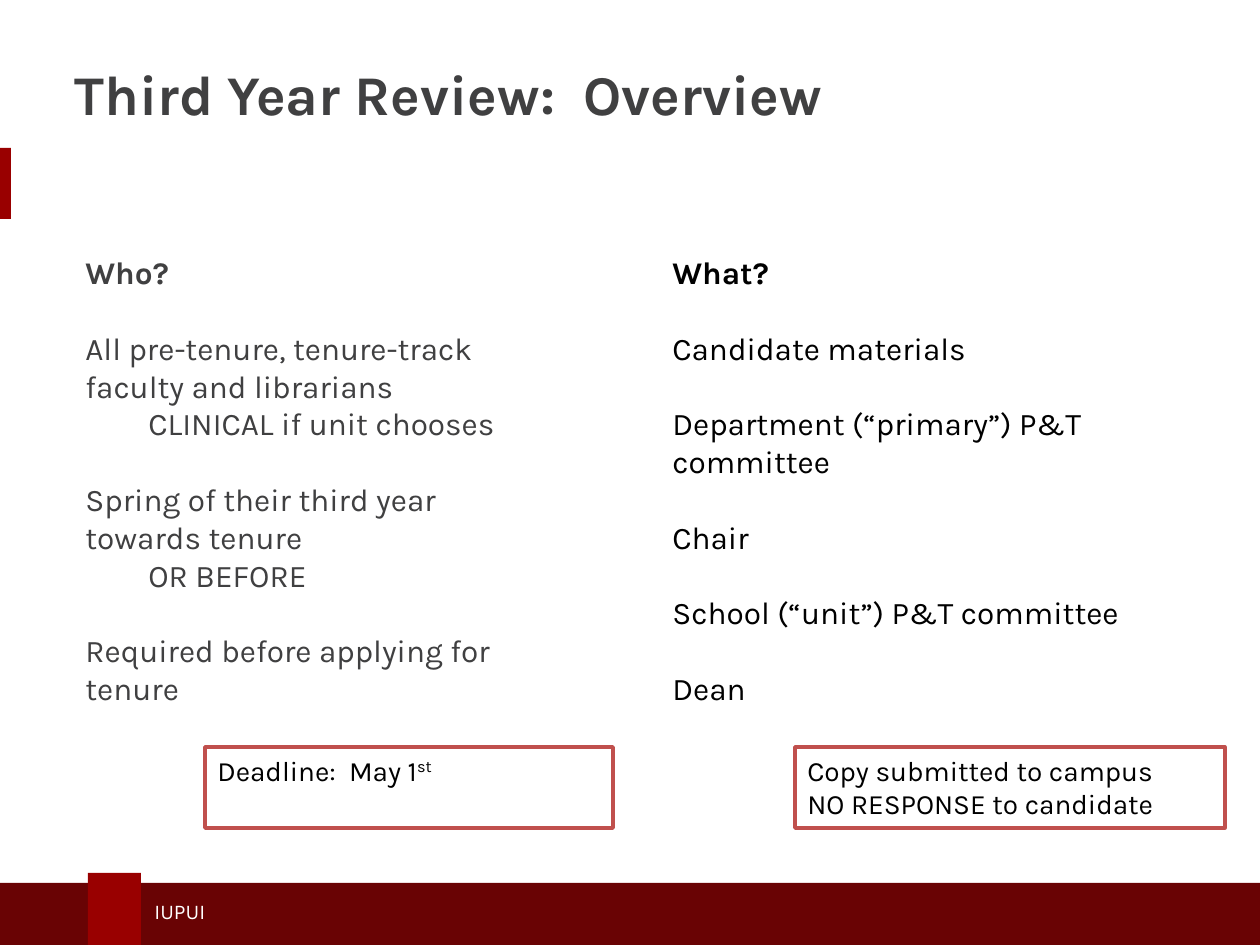
import pptx
import pptx.util
import pptx.dml.color
import pptx.enum.shapes
import pptx.enum.text

SCALE = 914400 / 126
CRIMSON, MAROON, GREY, BLACK, WHITE, RED = "990000", "690304", "404041", "000000", "FFFFFF", "C0504D"


def colour(hex_code):
    return pptx.dml.color.RGBColor.from_string(hex_code)


def write(box, lines, size, hex_code, anchor=pptx.enum.text.MSO_ANCHOR.TOP):
    frame = box.text_frame
    frame.word_wrap = True
    frame.vertical_anchor = anchor
    frame.text = "\n".join(lines)
    for para in frame.paragraphs:
        para.alignment = pptx.enum.text.PP_ALIGN.LEFT
        for span in para.runs:
            span.font.name = "Karla"
            span.font.size = pptx.util.Pt(size)
            span.font.color.rgb = colour(hex_code)
    return frame.paragraphs


deck = pptx.Presentation()
deck.slide_width = pptx.util.Inches(10)
deck.slide_height = pptx.util.Inches(7.5)
page = deck.slides.add_slide(deck.slide_layouts[6])

bars = [
    (0, 148, 11, 71, CRIMSON),
    (-4, 883, 1271, 63, MAROON),
    (88, 873, 53, 73, CRIMSON),
]
for *place, fill in bars:
    bar = page.shapes.add_shape(pptx.enum.shapes.MSO_SHAPE.RECTANGLE, *[round(n * SCALE) for n in place])
    bar.shadow.inherit = False
    bar.fill.solid()
    bar.fill.fore_color.rgb = colour(fill)
    bar.line.fill.background()

headings = [
    (142, 892, 498, 38, "IUPUI", 12, WHITE, False),
    (62, 49, 1102, 88, "Third Year Review:  Overview", 32, GREY, True),
]
for *place, text, size, ink, bold in headings:
    box = page.shapes.add_textbox(*[round(n * SCALE) for n in place])
    para = write(box, [text], size, ink, pptx.enum.text.MSO_ANCHOR.MIDDLE)[0]
    para.runs[0].font.bold = bold

columns = [
    (73, 247, 483, 597, GREY, [
        "Who?",
        "All pre-tenure, tenure-track faculty and librarians",
        "CLINICAL if unit chooses",
        "Spring of their third year towards tenure",
        "OR BEFORE",
        "Required before applying for tenure",
    ]),
    (660, 247, 504, 471, BLACK, [
        "What?",
        "Candidate materials",
        "Department (“primary”) P&T committee",
        "Chair",
        "School (“unit”) P&T committee",
        "Dean",
    ]),
]
indented = ["CLINICAL if unit chooses", "OR BEFORE"]
for *place, ink, lines in columns:
    box = page.shapes.add_textbox(*[round(n * SCALE) for n in place])
    paragraphs = write(box, lines, 18, ink)
    paragraphs[0].runs[0].font.bold = True
    for para in paragraphs[1:]:
        if para.text in indented:
            para._p.get_or_add_pPr().set("marL", str(round(63 * SCALE)))
        else:
            para.space_before = pptx.util.Pt(21.6)

notices = [
    (795, 747, 430, 81, ["Copy submitted to campus", "NO RESPONSE to candidate"]),
    (205, 747, 408, 81, ["Deadline:  May 1"]),
]
for *place, lines in notices:
    box = page.shapes.add_shape(pptx.enum.shapes.MSO_SHAPE.RECTANGLE, *[round(n * SCALE) for n in place])
    box.shadow.inherit = False
    box.fill.solid()
    box.fill.fore_color.rgb = colour(WHITE)
    box.line.color.rgb = colour(RED)
    box.line.width = pptx.util.Pt(2)
    paragraphs = write(box, lines, 16, BLACK)

ordinal = paragraphs[0].add_run()
ordinal.text = "st"
ordinal.font.name = "Karla"
ordinal.font.size = pptx.util.Pt(16)
ordinal.font.color.rgb = colour(BLACK)
ordinal.font._element.set("baseline", "30000")

deck.save("out.pptx")
